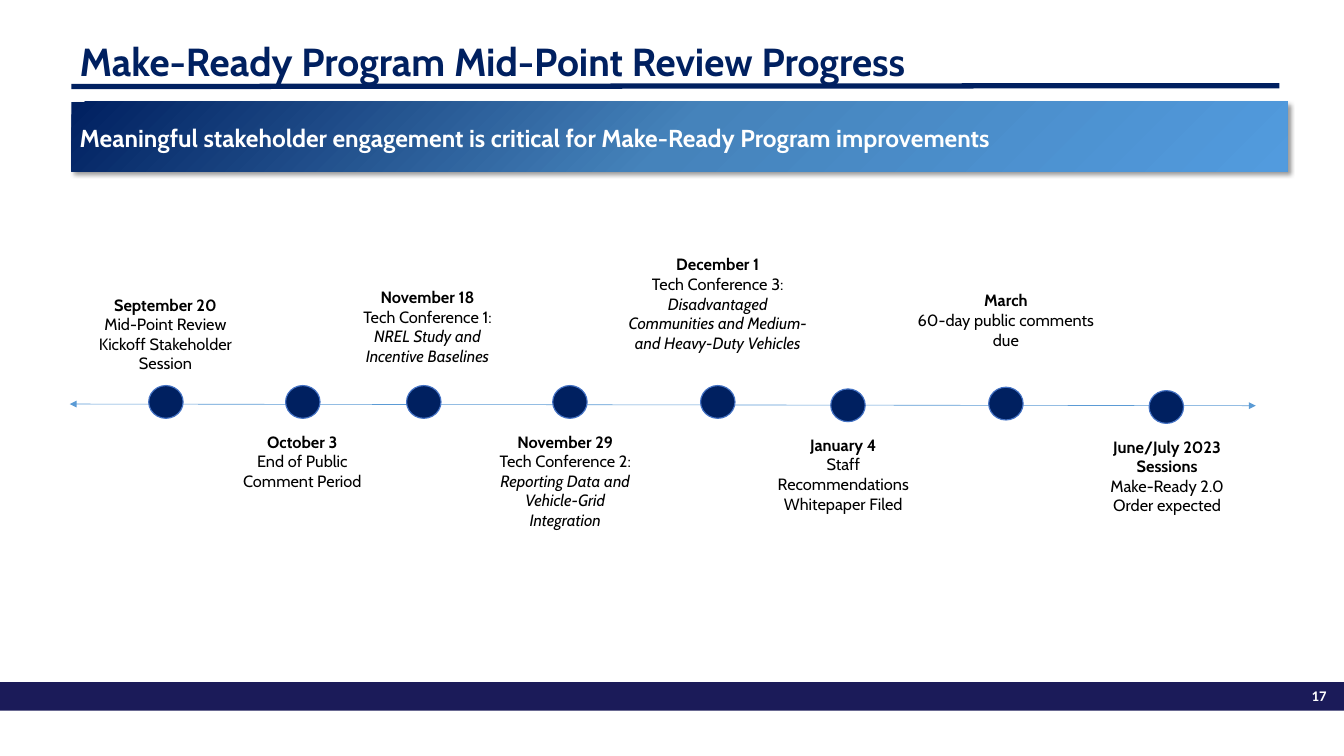
"""Builds the Make-Ready Program timeline slide."""
import lxml.etree
import pptx
import pptx.dml.color
import pptx.enum.shapes
import pptx.enum.text
import pptx.oxml
import pptx.oxml.ns
import pptx.util

COLOURS = {
    "navy": "002060", "footer": "1B1B59", "axis": "5B9BD5", "ring": "4472C4",
    "mid": "4583BB", "sky": "529BDE", "white": "FFFFFF", "black": "000000",
}
COLUMNS, ROWS = 16, 9
SHAPES = pptx.enum.shapes.MSO_SHAPE
ALIGN = pptx.enum.text.PP_ALIGN
MIDDLE = pptx.enum.text.MSO_ANCHOR.MIDDLE
NAMESPACE = 'xmlns:a="http://schemas.openxmlformats.org/drawingml/2006/main"'


class TimelineSlide:
    def __init__(self):
        self.deck = pptx.Presentation()
        self.deck.slide_width = pptx.util.Inches(16)
        self.deck.slide_height = pptx.util.Inches(9)
        self.slide = self.deck.slides.add_slide(self.deck.slide_layouts[6])
        self.font = "Cabin"

    def x(self, columns):
        return round(self.deck.slide_width * columns / COLUMNS)

    def y(self, rows):
        return round(self.deck.slide_height * rows / ROWS)

    def area(self, left, top, width, height):
        return self.x(left), self.y(top), self.x(width), self.y(height)

    def colour(self, name):
        return pptx.dml.color.RGBColor.from_string(COLOURS[name])

    def shape(self, kind, area, fill, ring=None):
        shape = self.slide.shapes.add_shape(kind, *self.area(*area))
        shape.shadow.inherit = False
        shape.fill.solid()
        shape.fill.fore_color.rgb = self.colour(fill)
        if ring:
            shape.line.color.rgb = self.colour(ring)
            shape.line.width = pptx.util.Pt(1)
        else:
            shape.line.fill.background()
        return shape

    def line(self, start, end, colour, width, arrows=False):
        line = self.slide.shapes.add_connector(
            pptx.enum.shapes.MSO_CONNECTOR.STRAIGHT,
            self.x(start[0]), self.y(start[1]), self.x(end[0]), self.y(end[1]))
        line.line.color.rgb = self.colour(colour)
        line.line.width = pptx.util.Pt(width)
        if arrows:
            outline = line._element.spPr.find(pptx.oxml.ns.qn("a:ln"))
            for end_tag in ("a:headEnd", "a:tailEnd"):
                lxml.etree.SubElement(outline, pptx.oxml.ns.qn(end_tag), type="triangle")
        lxml.etree.SubElement(line._element.spPr, pptx.oxml.ns.qn("a:effectLst"))

    def fill_text(self, frame, paragraphs, size, colour, align=ALIGN.LEFT, font=None, spacing=None):
        frame.word_wrap = True
        for index, runs in enumerate(paragraphs):
            paragraph = frame.add_paragraph() if index else frame.paragraphs[0]
            paragraph.alignment = align
            if spacing:
                paragraph.line_spacing = spacing
            for words, style in runs:
                run = paragraph.add_run()
                run.text = words
                run.font.name = font or self.font
                run.font.size = pptx.util.Pt(size)
                run.font.bold = style == "bold"
                run.font.italic = style == "italic"
                run.font.color.rgb = self.colour(colour)

    def text(self, area, paragraphs, size, colour, **style):
        box = self.slide.shapes.add_textbox(*self.area(*area))
        self.fill_text(box.text_frame, paragraphs, size, colour, **style)
        return box.text_frame

    def banner(self, area, words):
        banner = self.shape(SHAPES.RECTANGLE, area, "navy")
        banner.fill.gradient()
        banner.fill.gradient_angle = 315
        stops = banner._element.spPr.find(".//" + pptx.oxml.ns.qn("a:gsLst"))
        for stop in list(stops):
            stops.remove(stop)
        for share, name in ((0, "navy"), (50, "mid"), (100, "sky")):
            stops.append(pptx.oxml.parse_xml(
                f'<a:gs {NAMESPACE} pos="{share * 1000}"><a:srgbClr val="{COLOURS[name]}"/></a:gs>'))
        effects = banner._element.spPr.find(pptx.oxml.ns.qn("a:effectLst"))
        effects.append(pptx.oxml.parse_xml(
            f'<a:outerShdw {NAMESPACE} blurRad="{pptx.util.Pt(4)}" dist="{pptx.util.Pt(3)}" '
            f'dir="2700000" algn="tl" rotWithShape="0"><a:srgbClr val="{COLOURS["black"]}">'
            '<a:alpha val="40000"/></a:srgbClr></a:outerShdw>'))
        banner.text_frame.vertical_anchor = MIDDLE
        banner.text_frame.margin_top = self.y(0.09)
        self.fill_text(banner.text_frame, [[(words, "bold")]], 21, "white")

    def milestone(self, dot, label, date, *details):
        self.shape(SHAPES.OVAL, (*dot, 0.41, 0.39), "navy", "ring")
        self.text(label, [[(date, "bold")], *details], 14, "black", align=ALIGN.CENTER)


MILESTONES = [
    ((1.77, 4.59), (0.92, 3.46, 2.1, 1.04), "September 20",
     [("Mid-Point Review Kickoff Stakeholder Session", "plain")]),
    ((3.4, 4.59), (2.62, 5.09, 1.96, 0.81), "October 3",
     [("End of Public Comment Period", "plain")]),
    ((4.84, 4.59), (4.09, 3.37, 2, 1.04), "November 18",
     [("Tech Conference 1:", "plain")],
     [("NREL Study and Incentive Baselines", "italic")]),
    ((6.58, 4.59), (5.75, 5.09, 1.96, 1.28), "November 29",
     [("Tech Conference 2:", "plain")],
     [("Reporting Data and Vehicle-Grid Integration", "italic")]),
    ((8.34, 4.59), (7.34, 2.98, 2.41, 1.51), "December 1",
     [("Tech Conference 3: ", "plain"),
      ("Disadvantaged Communities and Medium- and Heavy-Duty Vehicles", "italic")]),
    ((9.89, 4.63), (9.06, 5.13, 1.96, 1.04), "January 4",
     [("Staff Recommendations Whitepaper Filed", "plain")]),
    ((11.77, 4.61), (10.77, 3.41, 2.41, 0.81), "March",
     [("60-day public comments due", "plain")]),
    ((13.68, 4.65), (12.98, 5.15, 1.83, 1.04), "June/July 2023 Sessions",
     [("Make-Ready 2.0 Order expected", "plain")]),
]


def main():
    page = TimelineSlide()
    page.shape(SHAPES.RECTANGLE, (0, 8.12, 16, 0.34), "footer")
    page.text((15.23, 8.13, 0.66, 0.31), [[("17", "bold")]], 12.6, "white",
              align=ALIGN.RIGHT, font="Calibri")
    page.line((0.85, 1.03), (15.23, 1.02), "navy", 4.5)
    title = page.text((0.85, 0.48, 14.38, 0.57),
                      [[("Make-Ready Program Mid-Point Review Progress", "bold")]],
                      33.5, "navy", spacing=0.9)
    title.vertical_anchor = MIDDLE
    page.banner((0.85, 1.21, 14.48, 0.83),
                "Meaningful stakeholder engagement is critical for Make-Ready Program improvements")
    page.line((0.83, 4.81), (14.95, 4.83), "axis", 0.5, arrows=True)
    for milestone in MILESTONES:
        page.milestone(*milestone)
    page.deck.save("out.pptx")


if __name__ == "__main__":
    main()
